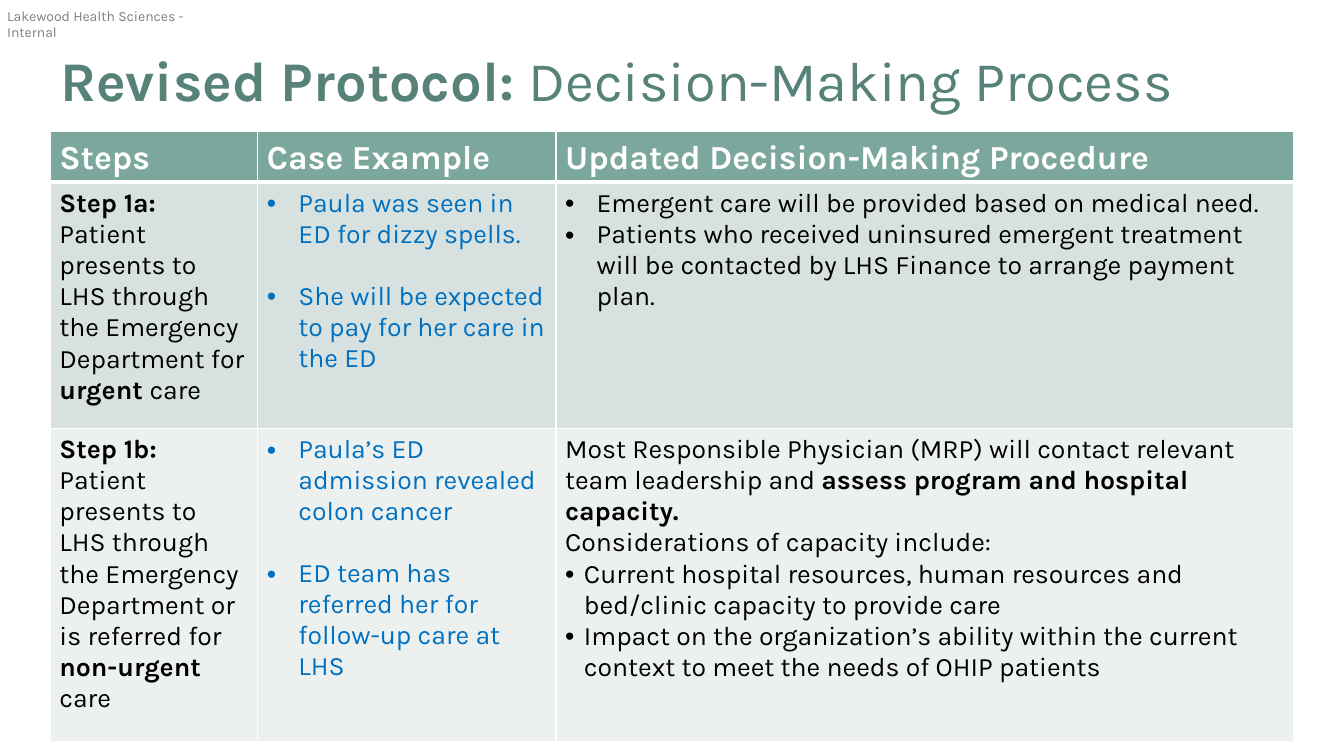
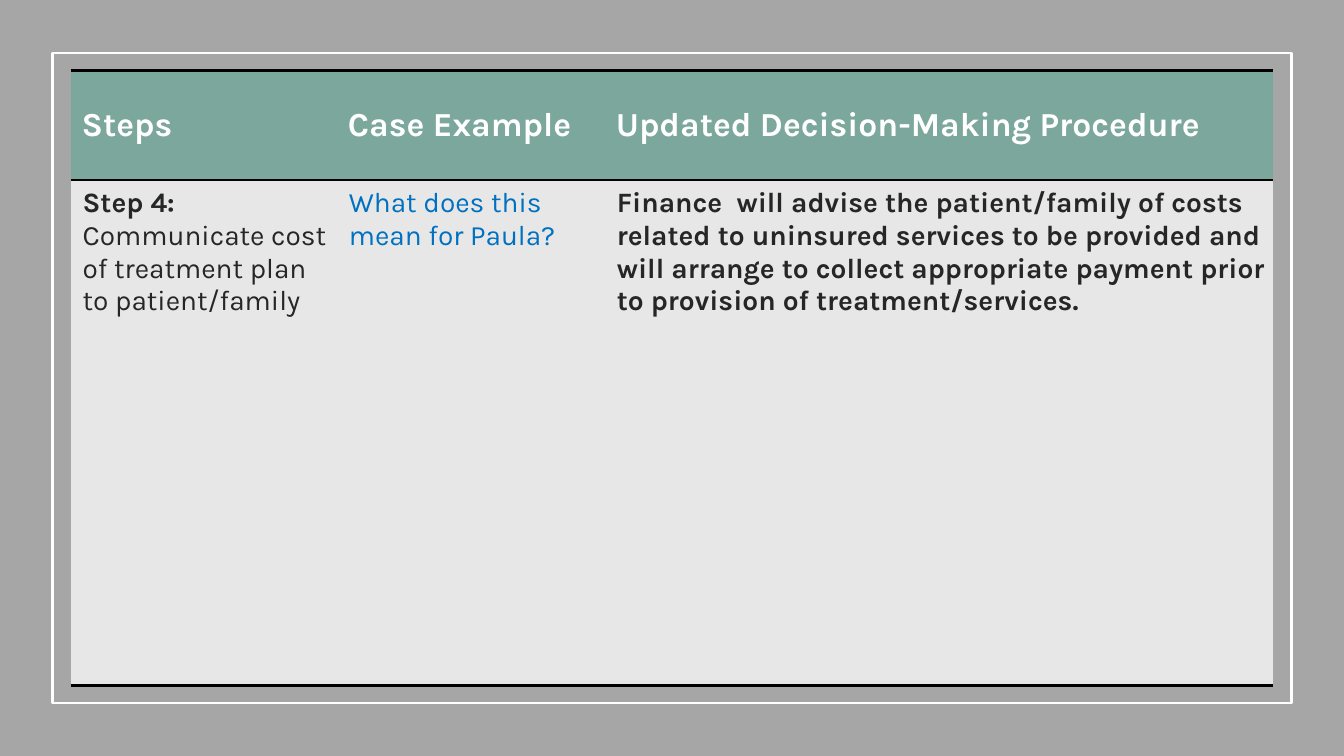
from dataclasses import dataclass

from pptx import Presentation
from pptx.dml.color import RGBColor
from pptx.enum.shapes import MSO_SHAPE as Shape
from pptx.enum.text import MSO_ANCHOR as Anchor
from pptx.oxml.ns import qn
from pptx.oxml.xmlchemy import OxmlElement as Element
from pptx.util import Emu, Inches, Pt

COLS, ROWS = 160, 90
PLAIN_TABLE = "{2D5ABB26-0587-4C30-8999-92F81FD0307C}"


@dataclass(frozen=True)
class Theme:
    font: str = "Karla"
    title: str = "578279"
    header: str = "7BA79D"
    band_dark: str = "D7E1DF"
    band_light: str = "ECF1EF"
    panel: str = "E7E7E7"
    backdrop: str = "A6A6A6"
    white: str = "FFFFFF"
    black: str = "000000"
    ink: str = "262626"
    example: str = "0070C0"
    label: str = "808080"
    title_size: int = 40
    header_size: int = 24
    panel_size: int = 20
    body_size: int = 19
    label_size: int = 10


@dataclass(frozen=True)
class Line:
    """One paragraph; hang is the bullet indent in columns, before is in points."""
    text: str
    hang: float = 0
    before: float = 0


def add_bullet(p, hang):
    pPr = p._p.get_or_add_pPr()
    pPr.set("marL", str(int(hang)))
    pPr.set("indent", str(-int(hang)))
    font = Element("a:buFont")
    font.set("typeface", "Arial")
    char = Element("a:buChar")
    char.set("char", "•")
    pPr.extend([font, char])


def add_text(p, text, *, size, color, font, bold=False, hang=0, before=0, spacing=None):
    """Fill a paragraph; each ** in the text switches bold on or off."""
    if before:
        p.space_before = Pt(before)
    if spacing:
        p.line_spacing = spacing
    if hang:
        add_bullet(p, hang)
    for i, part in enumerate(text.split("**")):
        if part:
            r = p.add_run()
            r.text = part
            r.font.name = font
            r.font.size = Pt(size)
            r.font.bold = bold != bool(i % 2)
            r.font.color.rgb = RGBColor.from_string(color)


def set_borders(cell, borders):
    """Draw the given sides: a dict of L, R, T, B to (colour, points)."""
    tcPr = cell._tc.get_or_add_tcPr()
    for side in "LRTB":
        if side in borders:
            color, width = borders[side]
            ln = Element(f"a:ln{side}")
            ln.set("w", str(Pt(width)))
            fill = Element("a:solidFill")
            rgb = Element("a:srgbClr")
            rgb.set("val", color)
            fill.append(rgb)
            ln.append(fill)
            tcPr.append(ln)


class Deck:
    def __init__(self, theme):
        self.theme = theme
        self.prs = Presentation()
        self.prs.slide_width, self.prs.slide_height = Inches(40 / 3), Inches(7.5)
        self.s = None

    def x(self, cols):
        return Emu(int(self.prs.slide_width * cols / COLS))

    def y(self, rows):
        return Emu(int(self.prs.slide_height * rows / ROWS))

    def box(self, left, top, width, height):
        return self.x(left), self.y(top), self.x(width), self.y(height)

    def add_slide(self):
        self.s = self.prs.slides.add_slide(self.prs.slide_layouts[6])

    def text(self, at, text, *, inset=0.1, anchor=Anchor.TOP, **fmt):
        tf = self.s.shapes.add_textbox(*self.box(*at)).text_frame
        tf.word_wrap = True
        tf.vertical_anchor = anchor
        tf.margin_left = tf.margin_right = Inches(inset)
        tf.margin_top = tf.margin_bottom = Inches(inset / 2)
        add_text(tf.paragraphs[0], text, font=self.theme.font, **fmt)

    def label(self, text):
        t = self.theme
        self.text((0.85, 0.85, 26, 2), text, inset=0, size=t.label_size, color=t.label)

    def title(self, text):
        t = self.theme
        self.text((6, 4.1, 141.2, 11.6), text, anchor=Anchor.MIDDLE,
                  size=t.title_size, color=t.title, spacing=0.9)

    def rect(self, at, fill=None, line=None):
        sp = self.s.shapes.add_shape(Shape.RECTANGLE, *self.box(*at))
        sp.shadow.inherit = False
        if fill:
            sp.fill.solid()
            sp.fill.fore_color.rgb = RGBColor.from_string(fill)
        else:
            sp.fill.background()
        if line:
            sp.line.color.rgb = RGBColor.from_string(line)
            sp.line.width = Pt(1.5)
        else:
            sp.line.fill.background()

    def cell(self, cell, lines, fill, margins, borders, anchor=Anchor.TOP, **fmt):
        (cell.margin_left, cell.margin_top,
         cell.margin_right, cell.margin_bottom) = map(Inches, margins)
        cell.vertical_anchor = anchor
        set_borders(cell, borders)
        cell.fill.solid()
        cell.fill.fore_color.rgb = RGBColor.from_string(fill)
        tf = cell.text_frame
        for i, line in enumerate(lines):
            p = tf.add_paragraph() if i else tf.paragraphs[0]
            add_text(p, line.text, hang=self.x(line.hang), before=line.before,
                     font=self.theme.font, **fmt)

    def steps_table(self, left, top, widths, heights, rows, *, fills, size, ink,
                    head_margins, body_margins, head_borders, body_borders):
        t = self.theme
        frame = self.s.shapes.add_table(
            len(heights), len(widths), *self.box(left, top, sum(widths), sum(heights)))
        table = frame.table
        table._tbl.tblPr.find(qn("a:tableStyleId")).text = PLAIN_TABLE
        for col, width in zip(table.columns, widths):
            col.width = self.x(width)
        for row, height in zip(table.rows, heights):
            row.height = self.y(height)
        headings = ("Steps", "Case Example", "Updated Decision-Making Procedure")
        for c, heading in enumerate(headings):
            self.cell(table.cell(0, c), [Line(heading)], t.header, head_margins,
                      head_borders, Anchor.MIDDLE,
                      size=t.header_size, color=t.white, bold=True)
        for r, (row, fill) in enumerate(zip(rows, fills), 1):
            for c, (lines, color) in enumerate(zip(row, (ink, t.example, ink))):
                self.cell(table.cell(r, c), lines, fill, body_margins, body_borders,
                          size=size, color=color)


def build_process_slide(deck):
    t = deck.theme
    wide, narrow, gap = 3.75, 2.25, 22
    rows = [
        ([Line("**Step 1a:**"),
          Line("Patient presents to LHS through the Emergency Department for "
               "**urgent **care")],
         [Line("Paula was seen in ED for dizzy spells.", wide),
          Line("She will be expected to pay for her care in the ED", wide, gap)],
         [Line("Emergent care will be provided based on medical need.", wide),
          Line("Patients who received uninsured emergent treatment will be contacted "
               "by LHS Finance to arrange payment plan.", wide)]),
        ([Line("**Step 1b:**"),
          Line("Patient presents to LHS through the Emergency Department or is "
               "referred for **non-urgent **care")],
         [Line("Paula’s ED admission revealed colon cancer", wide),
          Line("ED team has referred her for follow-up care at LHS", wide, gap)],
         [Line("Most Responsible Physician (MRP) will contact relevant team leadership "
               "and **assess program and hospital capacity.**"),
          Line("Considerations of capacity include:"),
          Line("Current hospital resources, human resources and bed/clinic capacity "
               "to provide care", narrow),
          Line("Impact on the organization’s ability within the current context to "
               "meet the needs of OHIP patients", narrow)]),
    ]
    deck.add_slide()
    deck.label("Lakewood Health Sciences - Internal")
    deck.title("**Revised Protocol: **Decision-Making Process")
    margins = (0.09, 0.06, 0.09, 0.04)
    grid = {side: (t.white, 1) for side in "LRTB"}
    deck.steps_table(
        6, 15.7, (24.7, 35.5, 87.8), (5.9, 29.3, 37.3), rows,
        fills=(t.band_dark, t.band_light), size=t.body_size, ink=t.black,
        head_margins=margins, body_margins=margins,
        head_borders={**grid, "B": (t.white, 3)},
        body_borders={side: grid[side] for side in "LRB"})


def build_cost_slide(deck):
    t = deck.theme
    row = (
        [Line("**Step 4:**"),
         Line("Communicate cost of treatment plan to patient/family")],
        [Line("What does this mean for Paula?")],
        [Line("**Finance  will advise the patient/family of costs related to uninsured "
              "services to be provided and will arrange to collect appropriate payment "
              "prior to provision of treatment/services.**")],
    )
    deck.add_slide()
    deck.rect((0, 0, COLS, ROWS), fill=t.backdrop)
    deck.rect((6.25, 6.3, 147.5, 77.4), line=t.white)
    rule = (t.black, 2)
    deck.steps_table(
        8.4, 8.4, (31.7, 31.9, 79.6), (13, 60.2), [row],
        fills=(t.panel,), size=t.panel_size, ink=t.ink,
        head_margins=(0.11, 0.06, 0.06, 0.06), body_margins=(0.12, 0.07, 0.07, 0.07),
        head_borders={"T": rule, "B": rule}, body_borders={"B": rule})


def main():
    deck = Deck(Theme())
    build_process_slide(deck)
    build_cost_slide(deck)
    deck.prs.save("out.pptx")


if __name__ == "__main__":
    main()
